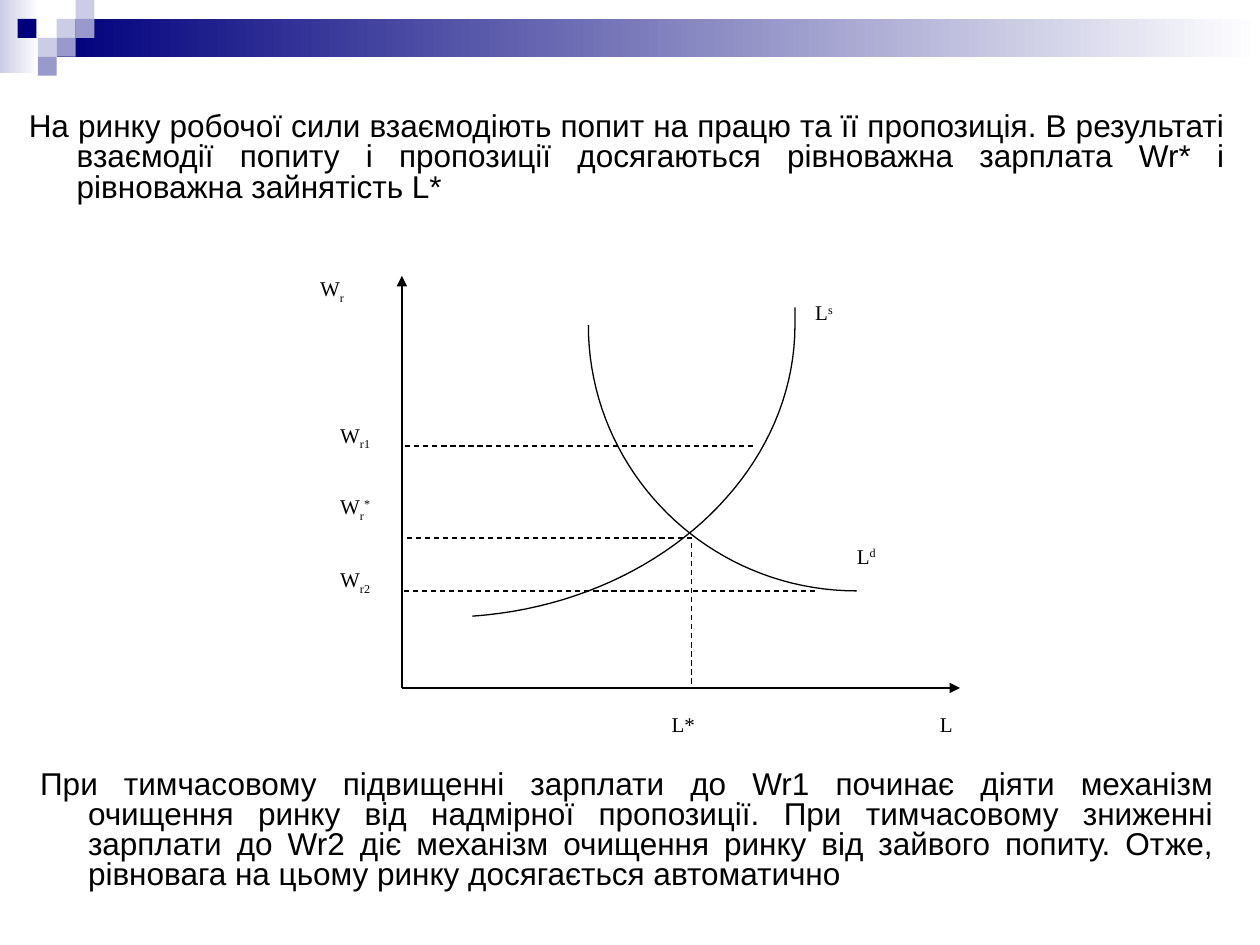
from pptx import Presentation
from pptx import util as u
from pptx.dml.color import RGBColor
from pptx.enum import dml, shapes, text
from pptx.oxml.ns import qn
from lxml import etree

Inches, Pt = u.Inches, u.Pt
COLORS = {"ink": "000000", "paper": "FFFFFF", "navy": "00007D",
          "lilac": "9999CC", "pale": "CCCCE6"}
TILE = 0.15
ORIGIN_X, ORIGIN_Y = 3.19, 5.46
LABEL_SIZE = (0.33, 0.38)

INTRO = ("На ринку робочої сили взаємодіють попит на працю та її пропозиція. "
         "В результаті взаємодії попиту і пропозиції досягаються рівноважна "
         "зарплата Wr* і рівноважна зайнятість L*")
CONCLUSION = ("При тимчасовому підвищенні зарплати до Wr1 починає діяти механізм "
              "очищення ринку від надмірної пропозиції. При тимчасовому зниженні "
              "зарплати до Wr2 діє механізм очищення ринку від зайвого попиту. "
              "Отже, рівновага на цьому ринку досягається автоматично")


def rgb(name):
    return RGBColor.from_string(COLORS[name])


def inches(*values):
    return [Inches(value) for value in values]


def add_block(page, left, top, width, height, color, fade_to=None):
    """Borderless rectangle, solid or fading from left to right."""
    block = page.shapes.add_shape(shapes.MSO_SHAPE.RECTANGLE,
                                  *inches(left, top, width, height))
    block.shadow.inherit = False
    block.line.fill.background()
    if fade_to:
        block.fill.gradient()
        block.fill.gradient_angle = 0
        for stop, name in zip(block.fill.gradient_stops, (color, fade_to)):
            stop.color.rgb = rgb(name)
    else:
        block.fill.solid()
        block.fill.fore_color.rgb = rgb(color)
    return block


def add_span(para, words, font="Arial", size=18, baseline=0):
    """Add a run; baseline is a percentage, above zero for superscript."""
    span = para.add_run()
    span.text = words
    span.font.name = font
    span.font.size = Pt(size)
    span.font.color.rgb = rgb("ink")
    if baseline:
        span._r.get_or_add_rPr().set("baseline", str(baseline * 1000))


def add_body(page, left, top, width, height, words, anchor):
    """Justified paragraph with a hanging indent."""
    box = page.shapes.add_textbox(*inches(left, top, width, height))
    box.text_frame.word_wrap = True
    box.text_frame.vertical_anchor = anchor
    para = box.text_frame.paragraphs[0]
    para.alignment = text.PP_ALIGN.JUSTIFY
    para.line_spacing = 0.8
    para.space_before = Pt(3.6)
    indent = Inches(0.38)
    properties = para._p.get_or_add_pPr()
    properties.set("marL", str(indent))
    properties.set("indent", str(-indent))
    add_span(para, words)


def add_label(page, left, top, base, sub="", sup=""):
    box = add_block(page, left, top, *LABEL_SIZE, "paper")
    frame = box.text_frame
    frame.word_wrap = True
    frame.vertical_anchor = text.MSO_ANCHOR.TOP
    frame.margin_left = frame.margin_right = 0
    frame.margin_top = frame.margin_bottom = 0
    para = frame.paragraphs[0]
    para.alignment = text.PP_ALIGN.LEFT
    for words, baseline in ((base, 0), (sub, -25), (sup, 30)):
        if words:
            add_span(para, words, font="Times New Roman", size=12, baseline=baseline)


def add_line(page, start, end, dashed=False, arrow=False):
    line = page.shapes.add_connector(shapes.MSO_CONNECTOR.STRAIGHT,
                                     *inches(*start, *end))
    line.line.color.rgb = rgb("ink")
    line.line.width = Pt(0.75)
    if dashed:
        line.line.dash_style = dml.MSO_LINE.DASH
    if arrow:
        etree.SubElement(line.line._get_or_add_ln(), qn("a:tailEnd"), type="triangle")
    etree.SubElement(line._element.spPr, qn("a:effectLst"))


def bezier(start, control1, control2, end, steps=40):
    """Points along a cubic Bezier curve."""
    points = []
    for step in range(steps + 1):
        t = step / steps
        weights = ((1 - t) ** 3, 3 * t * (1 - t) ** 2, 3 * t ** 2 * (1 - t), t ** 3)
        points.append(tuple(sum(w * p[axis] for w, p in
                                zip(weights, (start, control1, control2, end)))
                            for axis in (0, 1)))
    return points


def add_curve(page, points):
    builder = page.shapes.build_freeform(*points[0], scale=Inches(1))
    builder = page.shapes.build_freeform(*inches(*points[0]))
    builder.add_line_segments([inches(*point) for point in points[1:]], close=False)
    curve = builder.convert_to_shape()
    curve.shadow.inherit = False
    curve.fill.background()
    curve.line.color.rgb = rgb("ink")
    curve.line.width = Pt(0.75)


def add_header(page):
    add_block(page, 0, 0, 0.31, 0.58, "pale", fade_to="paper")
    add_block(page, 0.45, TILE, 9.55, 0.3, "navy", fade_to="paper")
    tiles = [(3, 1, "pale"), (4, 0, "pale"), (4, 1, "lilac"), (2, 2, "pale"),
             (0.93, 1, "navy"), (3, 2, "lilac"), (2, 3, "lilac")]
    for column, row, color in tiles:
        add_block(page, column * TILE, row * TILE, TILE, TILE, color)


def add_labor_market(page):
    labels = [(7.46, 5.65, "L", "", ""), (5.33, 5.65, "L*", "", ""),
              (6.8, 4.31, "L", "", "d"), (6.47, 2.38, "L", "", "s"),
              (2.54, 2.19, "W", "r", ""), (2.7, 3.35, "W", "r1", ""),
              (2.7, 3.92, "W", "r", "*"), (2.7, 4.5, "W", "r2", "")]
    for label in labels:
        add_label(page, *label)

    origin = (ORIGIN_X, ORIGIN_Y)
    for tip in ((ORIGIN_X, 2.19), (7.62, ORIGIN_Y)):
        add_line(page, origin, tip, arrow=True)

    demand = bezier((6.8, 4.69), (5.62, 4.69), (4.67, 3.74), (4.67, 2.58))
    supply = bezier((3.75, 4.89), (5.19, 4.79), (6.31, 3.78), (6.31, 2.58))
    add_curve(page, demand)
    add_curve(page, supply + [(6.31, 2.44)])

    for right, wage in ((5.98, 3.54), (5.49, 4.27), (6.47, 4.69)):
        add_line(page, (right, wage), (ORIGIN_X, wage), dashed=True)
    add_line(page, (5.49, 4.31), (5.49, ORIGIN_Y), dashed=True)


def main():
    deck = Presentation()
    deck.slide_width, deck.slide_height = inches(10, 7.5)
    page = deck.slides.add_slide(deck.slide_layouts[6])
    add_header(page)
    add_body(page, 0.13, 0.51, 9.69, 1.5, INTRO, text.MSO_ANCHOR.MIDDLE)
    add_labor_market(page)
    add_body(page, 0.22, 6.07, 9.51, 1.07, CONCLUSION, text.MSO_ANCHOR.TOP)
    deck.save("out.pptx")


if __name__ == "__main__":
    main()
